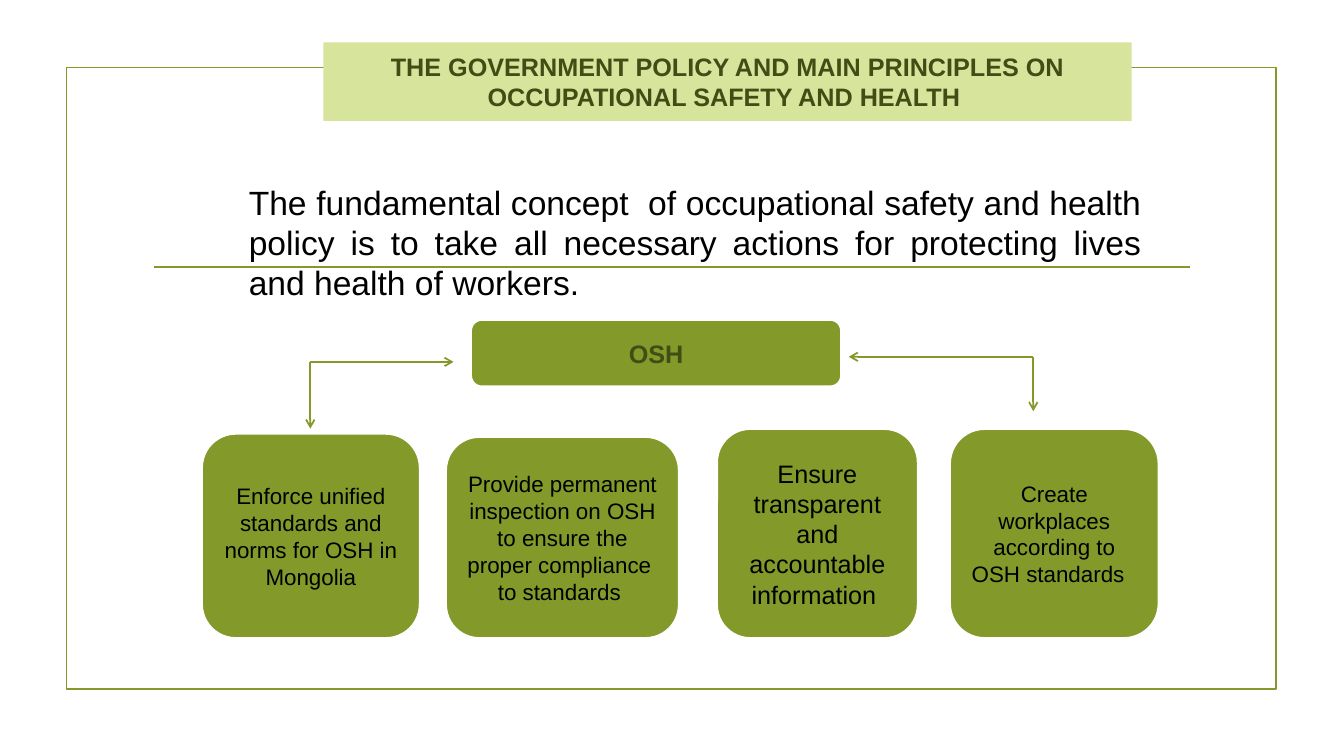
from dataclasses import dataclass

import lxml.etree
import pptx
import pptx.dml.color
import pptx.enum.shapes
import pptx.enum.text
import pptx.oxml.ns
import pptx.util

Cm, Pt = pptx.util.Cm, pptx.util.Pt
MSO_SHAPE = pptx.enum.shapes.MSO_SHAPE
PP_ALIGN = pptx.enum.text.PP_ALIGN
MSO_ANCHOR = pptx.enum.text.MSO_ANCHOR
qn = pptx.oxml.ns.qn

GREEN, DARK_GREEN, PALE_GREEN = "83992A", "414D15", "D6E49C"
BLACK, WHITE = "000000", "FFFFFF"
BOX_BOTTOM = 16.09


@dataclass
class Box:
    """A filled shape with centred text; lengths in centimetres."""
    text: str
    left: float
    top: float
    width: float
    height: float
    size: int = 16
    color: str = BLACK
    bold: bool = False
    fill: str = GREEN
    outline: str | None = WHITE
    preset: MSO_SHAPE = MSO_SHAPE.ROUNDED_RECTANGLE


@dataclass
class Bend:
    """Two arrows leaving one corner: one sideways, one down."""
    x: float
    y: float
    side_x: float
    down_y: float


def principle(text: str, left: float, top: float, width: float, size: int = 16) -> Box:
    return Box(text, left, top, width, BOX_BOTTOM - top, size)


PRINCIPLES = [
    principle("Enforce unified standards and norms for OSH in Mongolia", 5.08, 10.92, 5.51),
    principle("Provide permanent inspection on OSH to ensure the proper compliance  to standards ",
              11.23, 11, 5.89),
    principle("Ensure transparent and accountable information ", 18.06, 10.8, 5.08, 18),
    principle("Create workplaces according to OSH standards  ", 23.93, 10.8, 5.28),
]
OSH = Box("OSH", 11.86, 8.05, 9.35, 1.7, 18, DARK_GREEN, True)
TITLE = Box("THE GOVERNMENT POLICY AND MAIN PRINCIPLES ON OCCUPATIONAL SAFETY AND HEALTH ",
            8.15, 1.07, 20.37, 1.98, 18, DARK_GREEN, True, PALE_GREEN, None,
            MSO_SHAPE.RECTANGLE)
BENDS = [Bend(7.82, 9.12, 11.43, 10.8), Bend(26.04, 8.99, 21.39, 10.36)]
CONCEPT = ("The fundamental concept  of occupational safety and health policy is to take "
           "all necessary actions for protecting lives and health of workers. ")


def rgb(value: str) -> pptx.dml.color.RGBColor:
    return pptx.dml.color.RGBColor.from_string(value)


def set_line(line, color: str, width: float) -> None:
    line.color.rgb = rgb(color)
    line.width = Pt(width)


def add_run(p, text: str, size: int, color: str, bold: bool = False) -> None:
    r = p.add_run()
    r.text = text
    r.font.name = "Arial"
    r.font.size = Pt(size)
    r.font.bold = bold
    r.font.color.rgb = rgb(color)


def add_box(s, box: Box) -> None:
    sp = s.shapes.add_shape(box.preset, Cm(box.left), Cm(box.top), Cm(box.width), Cm(box.height))
    sp.shadow.inherit = False
    sp.fill.solid()
    sp.fill.fore_color.rgb = rgb(box.fill)
    if box.outline:
        set_line(sp.line, box.outline, 2)
    else:
        sp.line.fill.background()
    tf = sp.text_frame
    tf.word_wrap = True
    tf.vertical_anchor = MSO_ANCHOR.MIDDLE
    p = tf.paragraphs[0]
    p.alignment = PP_ALIGN.CENTER
    add_run(p, box.text, box.size, box.color, box.bold)


def add_line(s, x1: float, y1: float, x2: float, y2: float, arrow: bool = False) -> None:
    cxn = s.shapes.add_connector(pptx.enum.shapes.MSO_CONNECTOR.STRAIGHT,
                                 Cm(x1), Cm(y1), Cm(x2), Cm(y2))
    set_line(cxn.line, GREEN, 1.25)
    sp_pr = cxn._element.spPr
    if arrow:
        lxml.etree.SubElement(sp_pr.find(qn("a:ln")), qn("a:tailEnd"), type="arrow")
    lxml.etree.SubElement(sp_pr, qn("a:effectLst"))


def add_frame(s) -> None:
    sp = s.shapes.add_shape(MSO_SHAPE.RECTANGLE, Cm(1.68), Cm(1.7), Cm(30.48), Cm(15.67))
    sp.shadow.inherit = False
    sp.fill.background()
    set_line(sp.line, GREEN, 1.25)


def add_concept(s) -> None:
    tf = s.shapes.add_textbox(Cm(5.72), Cm(4.45), Cm(23.29), Cm(4.11)).text_frame
    tf.word_wrap = True
    p = tf.paragraphs[0]
    p.alignment = PP_ALIGN.JUSTIFY
    p._p.get_or_add_pPr().set("marL", str(Cm(0.3)))
    add_run(p, CONCEPT, 24, BLACK)


def main() -> None:
    prs = pptx.Presentation()
    prs.slide_width, prs.slide_height = Cm(33.87), Cm(19.05)
    s = prs.slides.add_slide(prs.slide_layouts[6])
    add_frame(s)
    add_line(s, 3.89, 6.73, 30, 6.73)
    add_concept(s)
    for box in [*PRINCIPLES, OSH]:
        add_box(s, box)
    for bend in BENDS:
        add_line(s, bend.x, bend.y, bend.side_x, bend.y, arrow=True)
        add_line(s, bend.x, bend.y, bend.x, bend.down_y, arrow=True)
    add_box(s, TITLE)
    prs.save("out.pptx")


if __name__ == "__main__":
    main()
